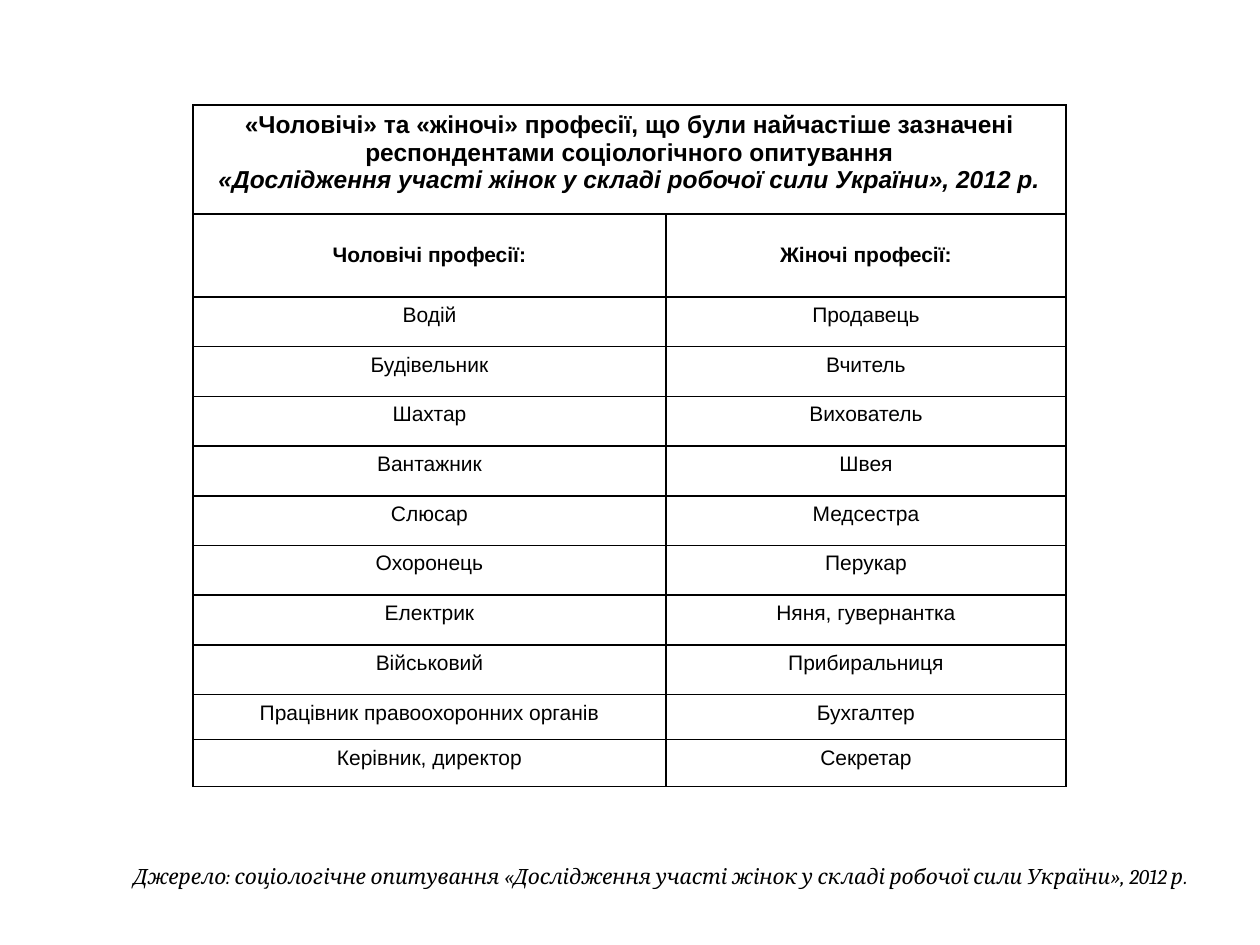
from lxml.etree import SubElement
from pptx import Presentation
from pptx.dml.color import RGBColor
from pptx.enum.text import MSO_ANCHOR, PP_ALIGN
from pptx.oxml.ns import qn
from pptx.util import Emu, Pt

PX_PER_INCH = 126
BLACK = "000000"
COL_WIDTHS = [473, 400]
ROW_HEIGHTS = [109, 83] + [398 / 8] * 8 + [45, 47]

TITLE = [
    ("«Чоловічі» та «жіночі» професії, що були найчастіше зазначені "
     "респондентами соціологічного опитування", False),
    ("«Дослідження участі жінок у складі робочої сили України», 2012 р.", True),
]
HEADERS = ("Чоловічі професії:", "Жіночі професії:")
PROFESSIONS = [
    ("Водій", "Продавець"),
    ("Будівельник", "Вчитель"),
    ("Шахтар", "Вихователь"),
    ("Вантажник", "Швея"),
    ("Слюсар", "Медсестра"),
    ("Охоронець", "Перукар"),
    ("Електрик", "Няня, гувернантка"),
    ("Військовий", "Прибиральниця"),
    ("Працівник правоохоронних органів", "Бухгалтер"),
    ("Керівник, директор", "Секретар"),
]
SOURCE = ("Джерело: соціологічне опитування «Дослідження участі жінок "
          "у складі робочої сили України», 2012 р.")


def px(n):
    return Emu(round(n * 914400 / PX_PER_INCH))


def color(hex_string):
    return RGBColor.from_string(hex_string)


def write(p, text, size, font="Arial", bold=False, italic=False):
    p.alignment = PP_ALIGN.CENTER
    r = p.add_run()
    r.text = text
    r.font.name, r.font.size = font, Pt(size)
    r.font.bold, r.font.italic = bold, italic
    r.font.color.rgb = color(BLACK)


def set_borders(cell, hex_string=BLACK, width=1):
    tc_pr = cell._tc.get_or_add_tcPr()
    for i, side in enumerate(("a:lnL", "a:lnR", "a:lnT", "a:lnB")):
        ln = SubElement(tc_pr, qn(side), w=str(Pt(width)))
        fill = SubElement(ln, qn("a:solidFill"))
        SubElement(fill, qn("a:srgbClr"), val=hex_string)
        tc_pr.insert(i, ln)


def add_professions_table(slide, left, top):
    table = slide.shapes.add_table(
        len(ROW_HEIGHTS), len(COL_WIDTHS), px(left), px(top),
        px(sum(COL_WIDTHS)), px(sum(ROW_HEIGHTS))).table
    table.first_row = table.horz_banding = False
    for col, width in zip(table.columns, COL_WIDTHS):
        col.width = px(width)
    for row, height in zip(table.rows, ROW_HEIGHTS):
        row.height = px(height)
    for cell in table.iter_cells():
        cell.fill.background()
        set_borders(cell)

    title = table.cell(0, 0)
    title.merge(table.cell(0, 1))
    tf = title.text_frame
    for i, (text, italic) in enumerate(TITLE):
        p = tf.add_paragraph() if i else tf.paragraphs[0]
        write(p, text, 14, bold=True, italic=italic)

    for r, names in enumerate([HEADERS] + PROFESSIONS, start=1):
        for c, name in enumerate(names):
            cell = table.cell(r, c)
            is_header = r == 1
            cell.vertical_anchor = MSO_ANCHOR.MIDDLE if is_header else MSO_ANCHOR.TOP
            write(cell.text_frame.paragraphs[0], name, 12, bold=is_header)


def add_source_note(slide, left, top, width, height):
    sp = slide.shapes.add_textbox(px(left), px(top), px(width), px(height))
    tf = sp.text_frame
    tf.word_wrap = False
    tf.vertical_anchor = MSO_ANCHOR.TOP
    write(tf.paragraphs[0], SOURCE, 12, font="Cambria", italic=True)


def main():
    prs = Presentation()
    prs.slide_width, prs.slide_height = px(1260), px(945)
    slide = prs.slides.add_slide(prs.slide_layouts[6])
    add_professions_table(slide, 193, 105)
    add_source_note(slide, 115, 857, 1092, 63)
    prs.save("out.pptx")


if __name__ == "__main__":
    main()
